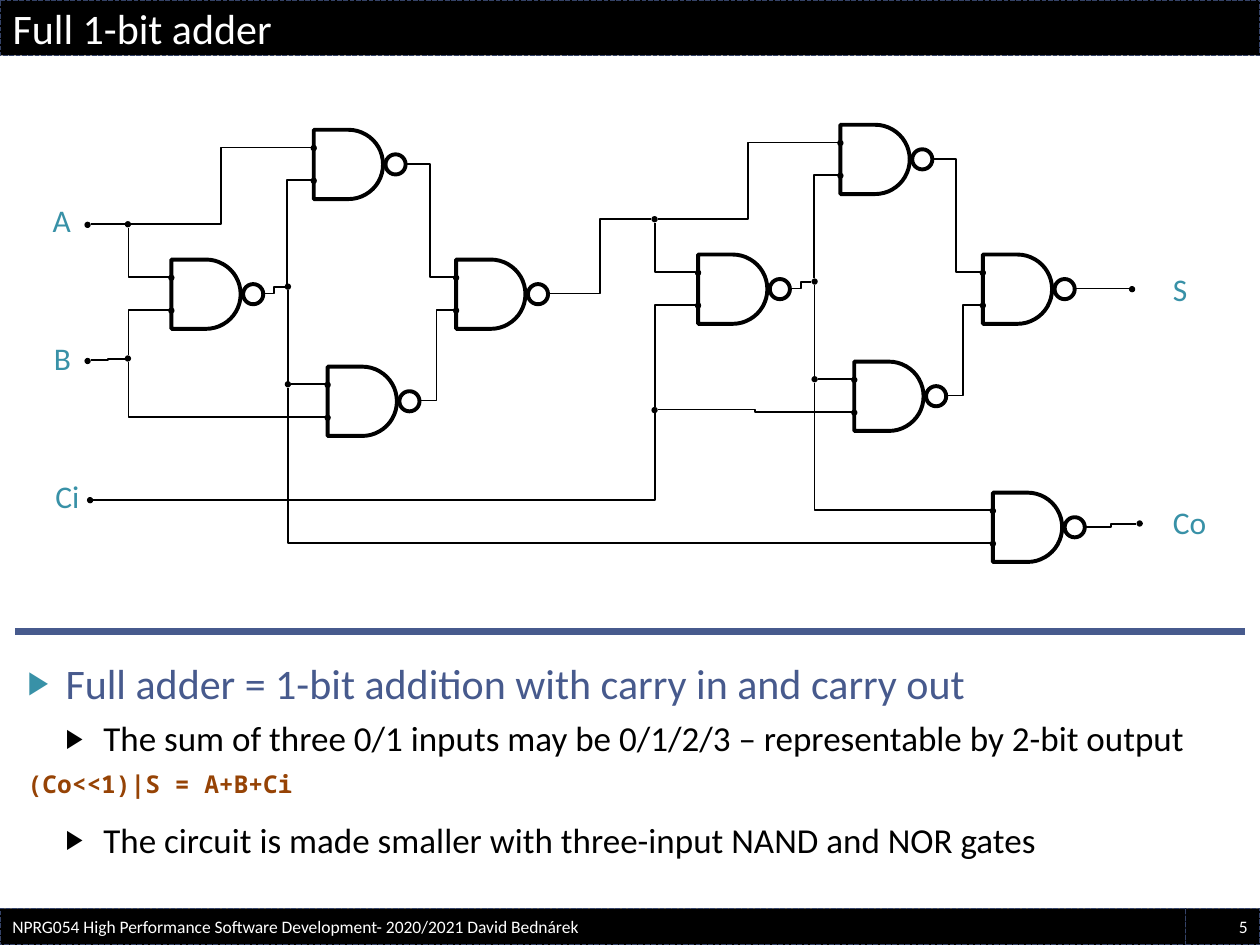
from lxml.etree import SubElement
from pptx import Presentation
from pptx.dml.color import RGBColor
from pptx.enum.dml import MSO_LINE
from pptx.enum.shapes import MSO_CONNECTOR, MSO_SHAPE
from pptx.enum.text import MSO_ANCHOR, MSO_AUTO_SIZE, PP_ALIGN
from pptx.oxml.ns import qn
from pptx.util import Inches, Pt

COLORS = {"ink": "000000", "paper": "FFFFFF", "edge": "354368",
          "heading": "475A8D", "accent": "3891A7", "code": "964305"}
COLUMNS, ROWS = 100, 75
XOR_GATES = {"first": (13.6, 20.6), "upper": (24.9, 10.3),
             "lower": (26, 29.1), "last": (36.2, 20.6)}
XOR_ORIGINS = [(0, 0), (41.8, -0.4)]


def pins(x, y):
    return {"top": (x - 0.2, y + 1.4), "bottom": (x - 0.2, y + 4), "out": (x + 7.3, y + 2.7)}


class SlideBuilder:
    def __init__(self, presentation):
        self.slide = presentation.slides.add_slide(presentation.slide_layouts[1])
        self.column = presentation.slide_width / COLUMNS
        self.row = presentation.slide_height / ROWS

    def place(self, x, y, width, height):
        return [round(value) for value in (x * self.column, y * self.row,
                                           width * self.column, height * self.row)]

    def color(self, name):
        return RGBColor.from_string(COLORS[name])

    def apply(self, target, values):
        for name, value in values.items():
            setattr(target, name, value)

    def add_text(self, paragraph, text, size, color, font="Calibri", bold=False):
        run = paragraph.add_run()
        run.text = text
        self.apply(run.font, {"name": font, "size": Pt(size), "bold": bold})
        run.font.color.rgb = self.color(color)

    def shape(self, parent, kind, box, fill=None, line=None):
        shape = parent.add_shape(kind, *self.place(*box))
        shape.shadow.inherit = False
        if fill:
            shape.fill.solid()
            shape.fill.fore_color.rgb = self.color(fill)
        else:
            shape.fill.background()
        if line:
            shape.line.color.rgb = self.color("ink")
            shape.line.width = Pt(line)
        else:
            shape.line.fill.background()
        return shape

    def bar(self, shape, text, size, align=PP_ALIGN.LEFT):
        shape.fill.solid()
        shape.fill.fore_color.rgb = self.color("ink")
        shape.line.color.rgb = self.color("edge")
        self.apply(shape.line, {"width": Pt(0.9), "dash_style": MSO_LINE.SQUARE_DOT})
        frame = shape.text_frame
        self.apply(frame, {"auto_size": MSO_AUTO_SIZE.NONE, "word_wrap": True,
                           "vertical_anchor": MSO_ANCHOR.MIDDLE})
        frame.paragraphs[0].alignment = align
        self.add_text(frame.paragraphs[0], text, size, "paper")

    def title(self, text, box):
        title = self.slide.shapes.title
        self.apply(title, dict(zip(("left", "top", "width", "height"), self.place(*box))))
        self.bar(title, text, 24)

    def footer(self, text, box, align=PP_ALIGN.LEFT):
        self.bar(self.shape(self.slide.shapes, MSO_SHAPE.RECTANGLE, box), text, 10, align)

    def body(self, items, box):
        body = self.slide.placeholders[1]
        self.apply(body, dict(zip(("left", "top", "width", "height"), self.place(*box))))
        frame = body.text_frame
        self.apply(frame, {"auto_size": MSO_AUTO_SIZE.NONE, "word_wrap": True,
                           "vertical_anchor": MSO_ANCHOR.TOP})
        for index, (text, style) in enumerate(items):
            paragraph = frame.paragraphs[0] if index == 0 else frame.add_paragraph()
            self.apply(paragraph, {"level": style["level"], "alignment": PP_ALIGN.LEFT,
                                   "space_before": Pt(style["before"]),
                                   "space_after": Pt(style["after"])})
            self.bullet(paragraph, style["margin"], style["bullet"])
            self.add_text(paragraph, text, **style["font"])

    def bullet(self, paragraph, margin, color):
        properties = paragraph._p.get_or_add_pPr()
        properties.set("marL", str(Inches(margin)))
        properties.set("indent", str(Inches(-0.3) if color else 0))
        if not color:
            SubElement(properties, qn("a:buNone"))
            return
        holder = SubElement(properties, qn("a:buClr"))
        SubElement(holder, qn("a:srgbClr"), val=COLORS[color])
        SubElement(properties, qn("a:buSzPct"), val="76000")
        SubElement(properties, qn("a:buChar"), char="▶")

    def label(self, text, box):
        textbox = self.slide.shapes.add_textbox(*self.place(*box))
        self.apply(textbox.text_frame, {"word_wrap": False,
                                        "auto_size": MSO_AUTO_SIZE.SHAPE_TO_FIT_TEXT})
        self.add_text(textbox.text_frame.paragraphs[0], text, 18, "accent")

    def wire(self, start, end, corner=False, color="ink", width=1):
        straight = start[0] == end[0] or start[1] == end[1]
        kind = MSO_CONNECTOR.STRAIGHT if straight else MSO_CONNECTOR.ELBOW
        connector = self.slide.shapes.add_connector(
            kind, *self.place(*start, *end))
        connector.line.color.rgb = self.color(color)
        connector.line.width = Pt(width)
        properties = connector._element.spPr
        if corner:
            properties.find(qn("a:prstGeom")).set("prst", "bentConnector2")
        SubElement(properties, qn("a:effectLst"))

    def dot(self, x, y, parent=None):
        self.shape(parent or self.slide.shapes, MSO_SHAPE.OVAL,
                   (x - 0.25, y - 0.25, 0.5, 0.5), fill="ink")

    def gate(self, x, y):
        parts = self.slide.shapes.add_group_shape().shapes
        self.shape(parts, MSO_SHAPE.FLOWCHART_DELAY, (x, y, 5.5, 5.5), line=2.25)
        self.shape(parts, MSO_SHAPE.OVAL, (x + 5.7, y + 1.95, 1.6, 1.6), line=2.25)
        for offset in (1.45, 4.05):
            self.dot(x, y + offset, parts)
        return pins(x, y)

    def xor(self, origin_x, origin_y):
        def at(x, y):
            return x + origin_x, y + origin_y

        gates = {name: self.gate(*at(*spot)) for name, spot in XOR_GATES.items()}
        first, upper, lower, last = gates.values()
        for node in ((10.15, 17.8), (22.85, 22.75), (22.85, 30.5)):
            self.dot(*at(*node))
        self.wire(first["top"], at(10.2, 18.1), corner=True)
        self.wire(upper["top"], at(10.4, 17.8))
        self.wire(upper["bottom"], at(22.8, 22.5), corner=True)
        self.wire(first["out"], at(22.6, 22.8))
        self.wire(at(22.85, 30.3), at(22.85, 23))
        self.wire(at(23.1, 30.5), lower["top"])
        self.wire(upper["out"], last["top"])
        self.wire(lower["out"], last["bottom"])
        return gates


def main():
    presentation = Presentation()
    presentation.slide_width, presentation.slide_height = Inches(10), Inches(7.5)
    builder = SlideBuilder(presentation)

    builder.title("Full 1-bit adder", (0, 0, 100, 4.4))
    builder.wire((1.2, 50.1), (98.8, 50.1), color="heading", width=4)
    point = {"level": 1, "before": 5, "after": 0, "margin": 0.6, "bullet": "ink",
             "font": {"size": 20, "color": "ink"}}
    heading = {"level": 0, "before": 6, "after": 0, "margin": 0.3, "bullet": "accent",
               "font": {"size": 24, "color": "heading"}}
    code = {"level": 4, "before": 6, "after": 6, "margin": 0, "bullet": None,
            "font": {"size": 14, "color": "code", "font": "Noto Sans Mono", "bold": True}}
    builder.body([
        ("Full adder = 1-bit addition with carry in and carry out", heading),
        ("The sum of three 0/1 inputs may be 0/1/2/3 – representable by 2-bit output", point),
        ("(Co<<1)|S = A+B+Ci", code),
        ("The circuit is made smaller with three-input NAND and NOR gates", point),
    ], (1.2, 51.7, 97.6, 18.9))
    builder.footer("5", (94.1, 72.1, 5.9, 2.9), PP_ALIGN.RIGHT)
    builder.footer("NPRG054 High Performance Software Development- 2020/2021 David Bednárek",
                   (0, 72.1, 94.1, 2.9))

    half_sum, full_sum = [builder.xor(*origin) for origin in XOR_ORIGINS]
    carry = builder.gate(78.8, 39.1)
    for node in ((6.95, 17.85), (6.95, 28.65), (7.15, 39.7), (10.15, 28.45),
                 (51.95, 32.55), (89.85, 22.95), (90.45, 41.55)):
        builder.dot(*node)

    for start, end in (((9.9, 17.8), (7.2, 17.8)),
                       ((9.9, 28.5), (7.2, 28.6)),
                       (half_sum["last"]["out"], (51.7, 17.4)),
                       (full_sum["lower"]["bottom"], (52.2, 32.5)),
                       ((89.6, 22.9), full_sum["last"]["out"]),
                       ((90.2, 41.6), carry["out"])):
        builder.wire(start, end)
    for start, end in ((half_sum["first"]["bottom"], (10.2, 28.2)),
                       (half_sum["lower"]["bottom"], (10.2, 28.7)),
                       (full_sum["first"]["bottom"], (52, 32.3)),
                       (carry["bottom"], (22.85, 30.8)),
                       (carry["top"], (64.65, 30.4)),
                       ((7.4, 39.7), (52, 32.8))):
        builder.wire(start, end, corner=True)

    for text, box in (("A", (3.2, 15.5, 3.5, 4)), ("B", (3.3, 26.4, 3.4, 4)),
                      ("Ci", (3.4, 37.4, 3.9, 4)), ("Co", (92.1, 39.4, 4.7, 4)),
                      ("S", (92.1, 20.9, 3.2, 4))):
        builder.label(text, box)
    presentation.save("out.pptx")


if __name__ == "__main__":
    main()
